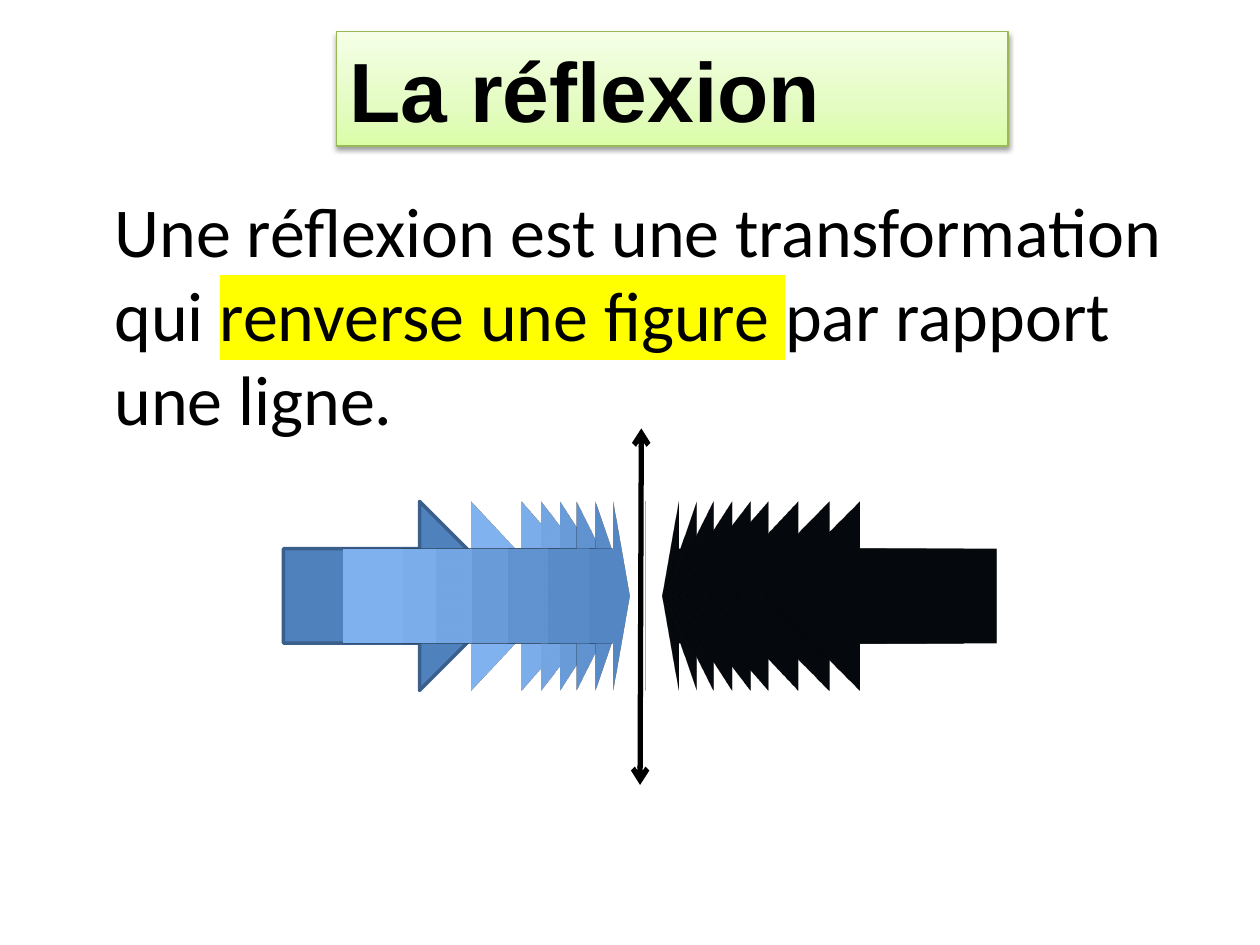
from copy import deepcopy

from lxml import etree
from pptx import Presentation
from pptx.dml.color import RGBColor
from pptx.enum.shapes import MSO_CONNECTOR, MSO_SHAPE
from pptx.enum.text import MSO_ANCHOR, PP_ALIGN
from pptx.oxml.ns import qn
from pptx.util import Inches, Pt

RIGHT_ARROW = MSO_SHAPE.RIGHT_ARROW
STRAIGHT = MSO_CONNECTOR.STRAIGHT
LEFT = PP_ALIGN.LEFT
MIDDLE = MSO_ANCHOR.MIDDLE
TITLE_ONLY = 5

ARROW_LEFTS = [2.67, 3.08, 3.25, 3.42, 3.58, 3.75, 3.92, 4.21, 4.5,
               4.67, 4.83, 5, 5.17, 5.33, 5.58, 5.83, 6.08]
FIRST_TURN = 20
TURN_STEP = 10


def color(value):
    return RGBColor.from_string(value)


def add_node(parent, tag, **attributes):
    node = etree.SubElement(parent, qn(tag))
    for name, value in attributes.items():
        node.set(name, str(value))
    return node


class ReflectionSlide:
    ink = "000000"
    blue = "4F81BD"
    navy = "3A5F8C"
    green = "98B955"
    yellow = "FFFF00"
    title_stops = [(0, "DAFDA7"), (0.35, "E4FCC2"), (1, "F5FFE7")]

    def __init__(self, deck):
        self.page = deck.slides.add_slide(deck.slide_layouts[TITLE_ONLY])

    def place(self, shape, left, top, width, height):
        shape.left, shape.top = Inches(left), Inches(top)
        shape.width, shape.height = Inches(width), Inches(height)

    def style_font(self, font, name, size, bold=False):
        font.name = name
        font.size = Pt(size)
        font.bold = bold
        font.color.rgb = color(self.ink)

    def title(self, text, *bounds):
        box = self.page.shapes.title
        self.place(box, *bounds)
        box.fill.gradient()
        box.fill.gradient_angle = 90
        stop_list = box.fill.gradient_stops[0]._gs.getparent()
        stop_list.insert(1, deepcopy(stop_list[0]))
        for stop, (position, value) in zip(box.fill.gradient_stops, self.title_stops):
            stop.position = position
            stop.color.rgb = color(value)
        box.line.color.rgb = color(self.green)
        box.line.width = Pt(0.75)
        effects = add_node(box._element.spPr, "a:effectLst")
        shadow = add_node(effects, "a:outerShdw", blurRad=Pt(3.1), dist=Pt(1.6),
                          dir=5400000, rotWithShape=0)
        shade = add_node(shadow, "a:srgbClr", val=self.ink)
        add_node(shade, "a:alpha", val=38000)
        frame = box.text_frame
        frame.text = text
        frame.word_wrap = True
        frame.vertical_anchor = MIDDLE
        para = frame.paragraphs[0]
        para.alignment = LEFT
        self.style_font(para.font, "Arial", 48, True)

    def text(self, spans, *bounds):
        box = self.page.shapes.add_textbox(0, 0, 0, 0)
        self.place(box, *bounds)
        box.text_frame.word_wrap = True
        para = box.text_frame.paragraphs[0]
        self.style_font(para.font, "Calibri", 40)
        for words, marked in spans:
            span = para.add_run()
            span.text = words
            if marked:
                highlight = add_node(span._r.get_or_add_rPr(), "a:highlight")
                add_node(highlight, "a:srgbClr", val=self.yellow)

    def arrow(self, left, turn=0):
        shape = self.page.shapes.add_shape(RIGHT_ARROW, 0, 0, 0, 0)
        self.place(shape, left, 3.98, 1.83, 1.5)
        shape.fill.solid()
        shape.fill.fore_color.rgb = color(self.blue)
        shape.line.color.rgb = color(self.navy)
        shape.line.width = Pt(2)
        shape.shadow.inherit = False
        if turn:
            scene = add_node(shape._element.spPr, "a:scene3d")
            camera = add_node(scene, "a:camera", prst="orthographicFront")
            add_node(camera, "a:rot", lat=0, lon=turn * 60000, rev=0)
            add_node(scene, "a:lightRig", rig="threePt", dir="t")

    def axis(self, start, end):
        points = [Inches(value) for value in (*start, *end)]
        line = self.page.shapes.add_connector(STRAIGHT, *points)
        line.line.color.rgb = color(self.ink)
        line.line.width = Pt(3)
        outline = line.line._get_or_add_ln()
        for tag in ("a:headEnd", "a:tailEnd"):
            add_node(outline, tag, type="arrow")
        add_node(line._element.spPr, "a:effectLst")


def main():
    deck = Presentation()
    deck.slide_width, deck.slide_height = Inches(10), Inches(7.5)
    slide = ReflectionSlide(deck)
    slide.title("La réflexion", 2.67, 0.25, 5.33, 0.91)
    slide.arrow(2.25)
    slide.axis((5.09, 3.4), (5.08, 6.23))
    for index, left in enumerate(ARROW_LEFTS):
        slide.arrow(left, FIRST_TURN + index * TURN_STEP)
    slide.text([("Une réflexion est une transformation qui ", False),
                ("renverse une figure ", True),
                ("par rapport une ligne.", False)], 0.81, 1.44, 8.72, 2.12)
    deck.save("out.pptx")


if __name__ == "__main__":
    main()
